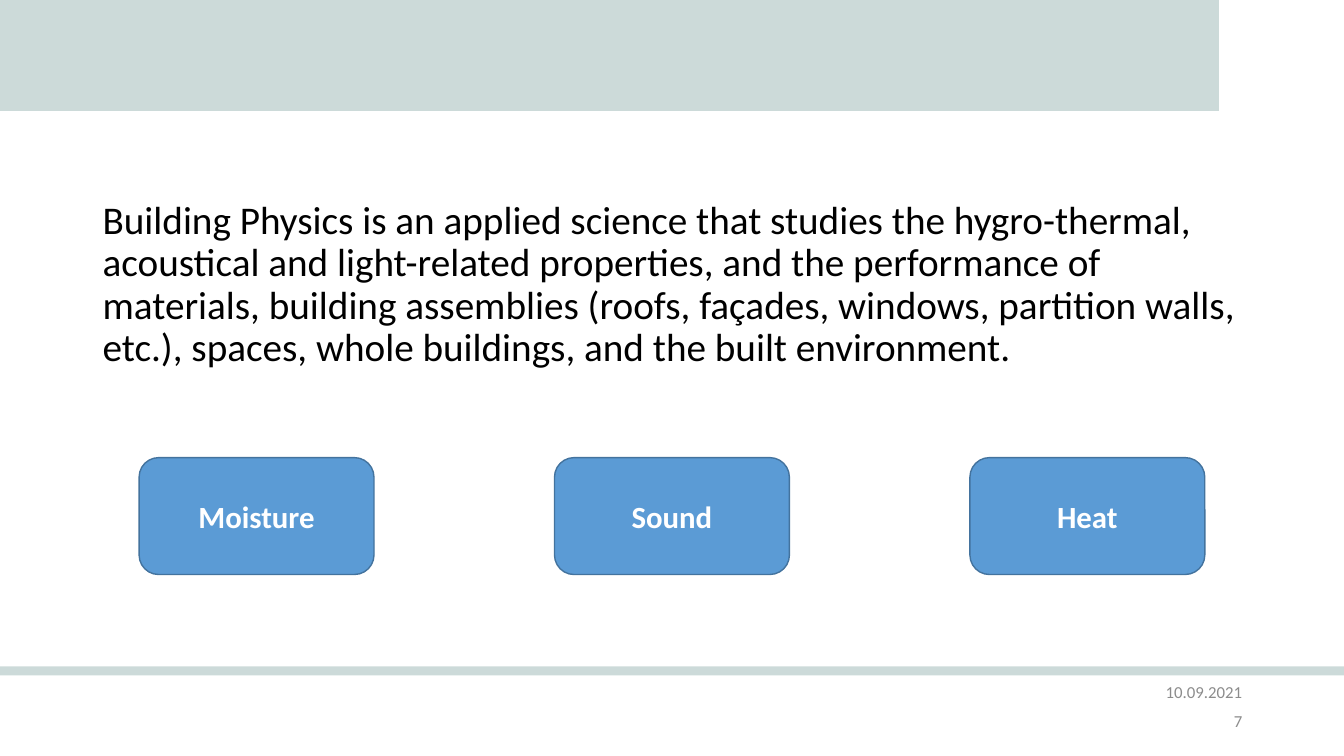
import pptx
import pptx.util
import pptx.dml.color
import pptx.enum.shapes
import pptx.enum.text
import pptx.oxml.ns
import lxml.etree
import dataclasses

SCALE = 9144  # EMU per px, 100 px to the inch
KIND = pptx.enum.shapes.MSO_SHAPE
ALIGN = pptx.enum.text.PP_ALIGN
MIDDLE = pptx.enum.text.MSO_ANCHOR.MIDDLE


@dataclasses.dataclass(frozen=True)
class Theme:
    font: str = "Calibri"
    band: str = "5C8A85"
    box: str = "5B9BD5"
    edge: str = "43739E"
    ink: str = "000000"
    light: str = "FFFFFF"
    grey: str = "8C8C8C"
    body: int = 28
    label: int = 22
    small: int = 12


THEME = Theme()


def px(*sizes):
    return [pptx.util.Emu(size * SCALE) for size in sizes]


def rgb(code):
    return pptx.dml.color.RGBColor.from_string(code)


def write(shape, text, size, color, align=ALIGN.LEFT, bold=False):
    """Put one run of text into a shape and return its paragraph."""
    shape.text_frame.word_wrap = True
    para = shape.text_frame.paragraphs[0]
    para.alignment = align
    run = para.add_run()
    run.text = text
    run.font.name = THEME.font
    run.font.size = pptx.util.Pt(size)
    run.font.bold = bold
    run.font.color.rgb = rgb(color)
    return para


def add_shape(slide, kind, place, fill):
    shape = slide.shapes.add_shape(kind, *px(*place))
    shape.shadow.inherit = False
    shape.fill.solid()
    shape.fill.fore_color.rgb = rgb(fill)
    return shape


def add_band(slide, place):
    """Add a borderless bar at 31 % opacity."""
    band = add_shape(slide, KIND.RECTANGLE, place, THEME.band)
    band.line.fill.background()
    qn = pptx.oxml.ns.qn
    tint = band.fill._xPr.find(qn("a:solidFill")).find(qn("a:srgbClr"))
    lxml.etree.SubElement(tint, qn("a:alpha"), val="31000")


def add_body(slide, place, text):
    box = slide.shapes.add_textbox(*px(*place))
    para = write(box, text, THEME.body, THEME.ink)
    para.line_spacing = 0.9


def add_note(slide, place, text):
    box = slide.shapes.add_textbox(*px(*place))
    box.text_frame.vertical_anchor = MIDDLE
    write(box, text, THEME.small, THEME.grey, ALIGN.RIGHT)


def add_topic(slide, place, text):
    box = add_shape(slide, KIND.ROUNDED_RECTANGLE, place, THEME.box)
    box.line.color.rgb = rgb(THEME.edge)
    box.line.width = pptx.util.Pt(1)
    box.text_frame.vertical_anchor = MIDDLE
    write(box, text, THEME.label, THEME.light, ALIGN.CENTER, bold=True)


def main():
    deck = pptx.Presentation()
    deck.slide_width, deck.slide_height = px(1333, 750)
    # The slide shows no title, so it takes the blank layout
    slide = deck.slides.add_slide(deck.slide_layouts[6])

    # Header and footer bands
    add_band(slide, (0, 0, 1209, 110))
    add_band(slide, (0, 661, 1333, 9))

    # Definition
    add_body(slide, (92, 194, 1150, 200),
             "Building Physics is an applied science that studies the "
             "hygro-thermal, acoustical and light-related properties, and "
             "the performance of materials, building assemblies (roofs, "
             "façades, windows, partition walls, etc.), spaces, whole "
             "buildings, and the built environment.")

    # Date and slide number
    add_note(slide, (942, 666, 300, 40), "10.09.2021")
    add_note(slide, (942, 695, 300, 40), "7")

    # Row of topics
    left, step = 138, 412
    for i, topic in enumerate(("Moisture", "Sound", "Heat")):
        add_topic(slide, (left + i * step, 454, 233, 116), topic)

    deck.save("out.pptx")


if __name__ == "__main__":
    main()
